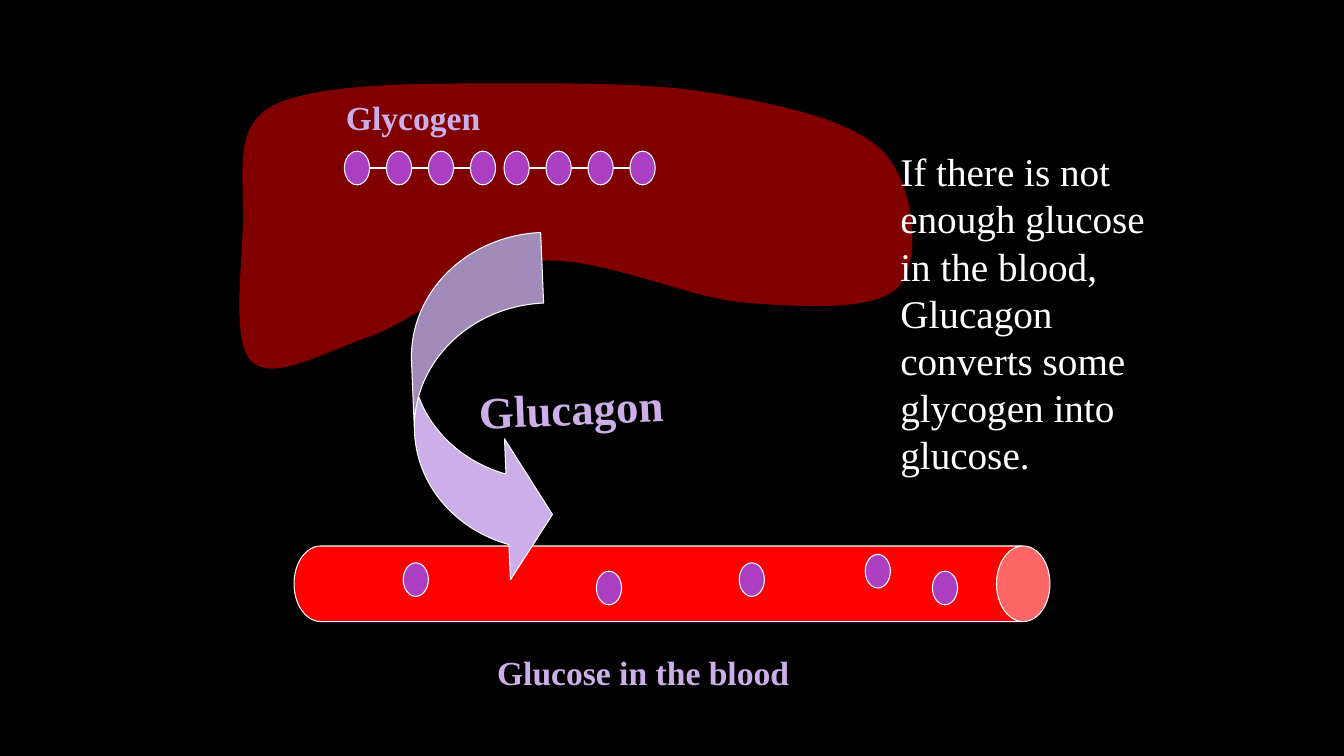
from pptx import Presentation
from pptx.dml.color import RGBColor
from pptx.enum.shapes import MSO_CONNECTOR as CONN, MSO_SHAPE as SHAPE
from pptx.enum.text import MSO_ANCHOR as ANCHOR, MSO_AUTO_SIZE as FIT, PP_ALIGN as ALIGN
from pptx.oxml.ns import qn
from pptx.util import Pt

PX = 9525
BLACK = RGBColor(0x00, 0x00, 0x00)
WHITE = RGBColor(0xFF, 0xFF, 0xFF)
MAROON = RGBColor(0x80, 0x00, 0x00)
RED = RGBColor(0xFF, 0x00, 0x00)
PURPLE = RGBColor(0xAC, 0x3E, 0xC1)
LILAC = RGBColor(0xCC, 0xAE, 0xE8)
LABEL = dict(name="Times New Roman", size=Pt(24), bold=True)
BODY = dict(name="Times New Roman", size=Pt(28), bold=False)
ARROW_LABEL = dict(name="Times New Roman", size=Pt(32), bold=True)
BEAD_W, BEAD_H = 24, 32
LIVER_START = (12, 130)
LIVER_CURVES = [
    ((12, 93), (8, 62), (20, 42)),
    ((32, 22), (50, 17), (84, 10)),
    ((119, 4), (167, 2), (228, 2)),
    ((290, 2), (387, 0), (452, 10)),
    ((517, 21), (589, 35), (620, 66)),
    ((651, 97), (657, 170), (636, 194)),
    ((614, 218), (549, 214), (492, 210)),
    ((435, 206), (352, 165), (292, 170)),
    ((232, 175), (177, 226), (132, 242)),
    ((86, 258), (40, 285), (20, 266)),
    ((0, 247), (12, 168), (12, 130)),
]


def emu(*lengths):
    """Turn px lengths into EMU."""
    return [round(v * PX) for v in lengths]


def style(sp, fill, line):
    """Give a shape its flat fill and thin outline."""
    sp.shadow.inherit = False
    sp.fill.solid()
    sp.fill.fore_color.rgb = fill
    sp.line.color.rgb = line
    sp.line.width = Pt(0.75)
    return sp


def add_shape(s, kind, box, fill, rotation=0, adjustments=()):
    """Add a white-outlined preset shape."""
    sp = style(s.shapes.add_shape(kind, *emu(*box)), fill, WHITE)
    sp.rotation = rotation
    for i, value in enumerate(adjustments):
        sp.adjustments[i] = value
    return sp


def add_text(s, box, text, font, color):
    """Add a wrapped text box with one paragraph."""
    sp = s.shapes.add_textbox(*emu(*box))
    tf = sp.text_frame
    tf.word_wrap = True
    tf.auto_size = FIT.SHAPE_TO_FIT_TEXT
    r = tf.paragraphs[0].add_run()
    r.text = text
    for key, value in font.items():
        setattr(r.font, key, value)
    r.font.color.rgb = color
    return sp


def add_bead(s, x, y):
    """Add one glucose unit."""
    add_shape(s, SHAPE.OVAL, (x, y, BEAD_W, BEAD_H), PURPLE)


def curve_segments(sp):
    """Turn each three straight segments of an outline into one cubic curve."""
    segments = list(sp._element.iter(qn("a:lnTo")))
    for i in range(0, len(segments), 3):
        first = segments[i]
        curve = first.makeelement(qn("a:cubicBezTo"), {})
        first.addprevious(curve)
        for segment in segments[i:i + 3]:
            curve.append(segment[0])
            segment.getparent().remove(segment)


def add_liver(s, x, y):
    """Draw the liver outline from its top-left corner."""
    builder = s.shapes.build_freeform(x + LIVER_START[0], y + LIVER_START[1], scale=PX)
    points = [(x + px, y + py) for curve in LIVER_CURVES for px, py in curve]
    builder.add_line_segments(points, close=True)
    liver = style(builder.convert_to_shape(), MAROON, MAROON)
    curve_segments(liver)


def add_chain(s, x, y, count, pitch=40):
    """Draw a row of linked glucose units."""
    middle = y + BEAD_H // 2
    line = s.shapes.add_connector(
        CONN.STRAIGHT, *emu(x + BEAD_W, middle, x + pitch * (count - 1), middle))
    line.line.color.rgb = WHITE
    line.line.width = Pt(0.75)
    pr = line._element.spPr
    pr.append(pr.makeelement(qn("a:effectLst"), {}))
    for i in range(count):
        add_bead(s, x + pitch * i, y)


def add_glycogen(s, x, y):
    """Place the glycogen label above its two chains."""
    add_text(s, (x, y, 208, 48), "Glycogen", LABEL, LILAC)
    for dx in (8, 160):
        add_chain(s, x + dx, y + 56, 4)


def add_vessel(s, x, y, w, h):
    """Draw the blood vessel as a can lying on its side."""
    can = (x + (w - h) // 2, y + (h - w) // 2, h, w)
    add_shape(s, SHAPE.CAN, can, RED, 90, [0.708])
    add_text(s, (x + 184, y + h + 24, 384, 48), "Glucose in the blood", LABEL, LILAC)


def add_blood_glucose(s, x, y):
    """Scatter free glucose in the vessel."""
    for dx, dy in ((104, 16), (288, 24), (424, 16), (544, 8), (608, 24)):
        add_bead(s, x + dx, y + dy)


def add_glucagon(s, x, y, w, h):
    """Draw the curved arrow and its tilted label."""
    add_shape(s, SHAPE.CURVED_UP_ARROW, (x, y, w, h), LILAC, 87.6, [0.525, 1.05, 0.333])
    sp = add_text(s, (x + 144, y + 32, 220, 56), "Glucagon", ARROW_LABEL, LILAC)
    sp.rotation = -2.4
    tf = sp.text_frame
    tf.auto_size = FIT.NONE
    tf.vertical_anchor = ANCHOR.MIDDLE
    tf.paragraphs[0].alignment = ALIGN.CENTER


def main():
    """Build and save the slide."""
    prs = Presentation()
    prs.slide_width, prs.slide_height = emu(1280, 720)
    s = prs.slides.add_slide(prs.slide_layouts[6])
    s.background.fill.solid()
    s.background.fill.fore_color.rgb = BLACK
    add_liver(s, 220, 78)
    add_vessel(s, 280, 520, 720, 72)
    add_text(s, (848, 136, 272, 323),
             "If there is not enough glucose in the blood, Glucagon converts "
             "some glycogen into glucose.", BODY, WHITE)
    add_glycogen(s, 320, 88)
    add_glucagon(s, 290, 328, 336, 128)
    add_blood_glucose(s, 280, 520)
    prs.save("out.pptx")


if __name__ == "__main__":
    main()
